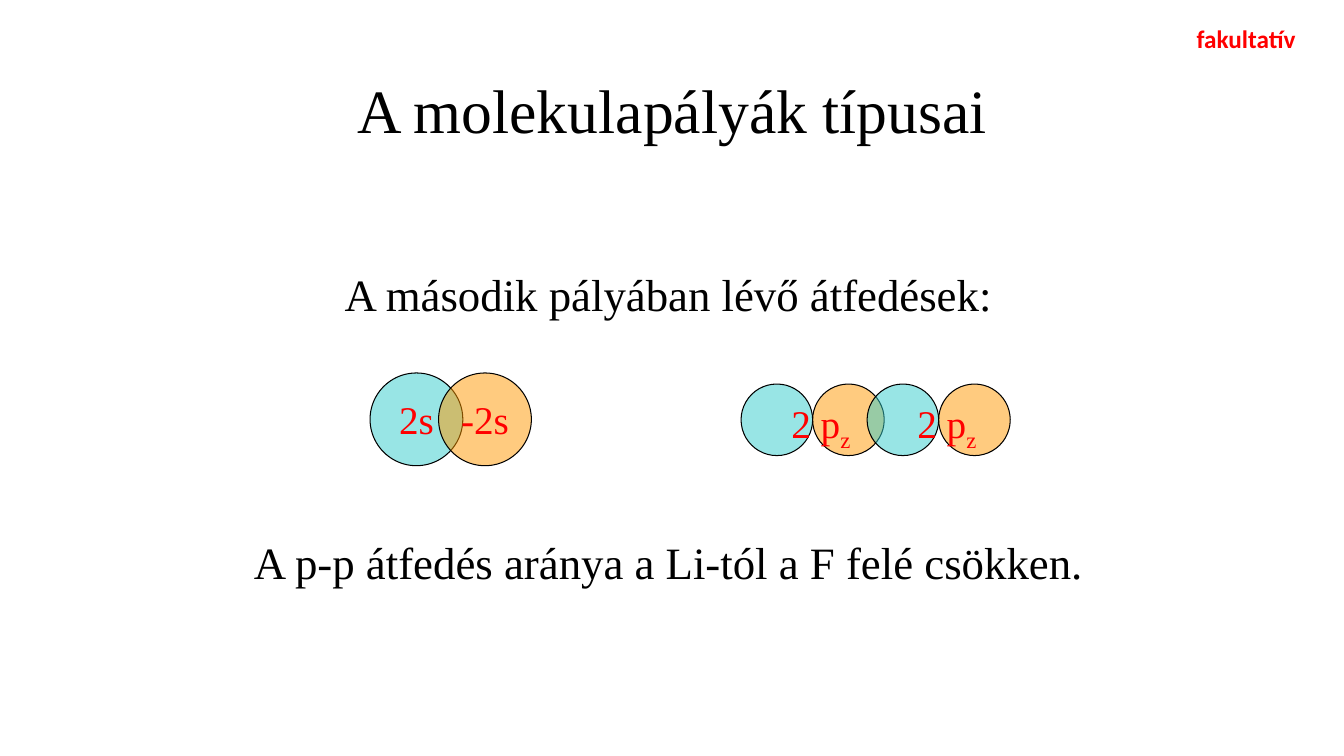
"""Builds a slide on the overlaps that form molecular orbitals."""
import dataclasses

import lxml.etree
import pptx
import pptx.dml.color
import pptx.enum.shapes
import pptx.enum.text
import pptx.oxml.ns
import pptx.util

Inches = pptx.util.Inches
Align = pptx.enum.text.PP_ALIGN
Anchor = pptx.enum.text.MSO_ANCHOR


@dataclasses.dataclass(frozen=True)
class Theme:
    """Colours, fonts and type sizes of the slide."""
    ink: str = "000000"
    accent: str = "FF0000"
    positive: str = "33CCCC"
    negative: str = "FF9900"
    serif: str = "Times New Roman"
    sans: str = "Calibri"
    title: int = 44
    body: int = 32
    label: int = 28
    tag: int = 18
    outline: float = 0.75
    opacity: int = 50


class OrbitalSlide:
    """Holds the theme and the current slide and draws its elements."""

    def __init__(self, slide, theme):
        """Keep the slide and its theme."""
        self.slide = slide
        self.theme = theme

    def fill_text(self, frame, words, size, color, font=None, bold=False, align=Align.LEFT, subscript=""):
        """Fill a text frame with one paragraph and an optional subscript."""
        paragraph = frame.paragraphs[0]
        paragraph.alignment = align
        paragraph.font.name = font or self.theme.serif
        paragraph.font.size = pptx.util.Pt(size)
        paragraph.font.bold = bold
        paragraph.font.color.rgb = pptx.dml.color.RGBColor.from_string(color)
        paragraph.add_run().text = words
        if subscript:
            index = paragraph.add_run()
            index.text = subscript
            index._r.get_or_add_rPr().set("baseline", "-25000")
        return paragraph

    def text(self, left, top, width, height, words, size, color, shapes=None, **style):
        """Add a one-line text box."""
        shapes = shapes or self.slide.shapes
        box = shapes.add_textbox(Inches(left), Inches(top), Inches(width), Inches(height))
        box.text_frame.word_wrap = False
        self.fill_text(box.text_frame, words, size, color, **style)

    def title(self, words):
        """Add the centred slide title."""
        heading = self.slide.shapes.add_textbox(Inches(0.92), Inches(0.4), Inches(11.5), Inches(1.45))
        heading.text_frame.word_wrap = True
        heading.text_frame.vertical_anchor = Anchor.MIDDLE
        paragraph = self.fill_text(heading.text_frame, words, self.theme.title, self.theme.ink, align=Align.CENTER)
        paragraph.line_spacing = 0.9

    def lobe(self, left, top, diameter, color, words="", shapes=None):
        """Add a translucent circle for one orbital lobe."""
        if shapes is None:
            shapes = self.slide.shapes
        circle = shapes.add_shape(pptx.enum.shapes.MSO_SHAPE.OVAL, Inches(left), Inches(top),
                                  Inches(diameter), Inches(diameter))
        circle.shadow.inherit = False
        circle.fill.solid()
        circle.fill.fore_color.rgb = pptx.dml.color.RGBColor.from_string(color)
        tint = circle._element.spPr.find(".//" + pptx.oxml.ns.qn("a:srgbClr"))
        alpha = lxml.etree.SubElement(tint, pptx.oxml.ns.qn("a:alpha"))
        alpha.set("val", str(self.theme.opacity * 1000))
        circle.line.color.rgb = pptx.dml.color.RGBColor.from_string(self.theme.ink)
        circle.line.width = pptx.util.Pt(self.theme.outline)
        if words:
            circle.text_frame.word_wrap = False
            circle.text_frame.vertical_anchor = Anchor.MIDDLE
            self.fill_text(circle.text_frame, words, self.theme.label, self.theme.accent, align=Align.CENTER)

    def p_orbital(self, left, top, diameter):
        """Add a grouped pair of touching lobes with their label."""
        orbital = self.slide.shapes.add_group_shape().shapes
        for step, color in enumerate((self.theme.positive, self.theme.negative)):
            self.lobe(left + step * diameter, top, diameter, color, shapes=orbital)
        self.text(left + 0.4, top + 0.1, 0.81, 0.57, "2 p", self.theme.label, self.theme.accent,
                  shapes=orbital, subscript="z")


def main():
    """Build the slide and save it."""
    deck = pptx.Presentation()
    deck.slide_width, deck.slide_height = Inches(13.33), Inches(7.5)
    theme = Theme()
    page = OrbitalSlide(deck.slides.add_slide(deck.slide_layouts[6]), theme)

    page.title("A molekulapályák típusai")
    page.text(3.32, 2.6, 6.71, 0.64, "A második pályában lévő átfedések:", theme.body, theme.ink)
    page.lobe(3.67, 3.7, 0.92, theme.positive, "2s")
    page.lobe(4.35, 3.7, 0.92, theme.negative, "-2s")
    page.text(2.42, 5.26, 8.51, 0.64, "A p-p átfedés aránya a Li-tól a F felé csökken.", theme.body, theme.ink)
    for left in (7.35, 8.6):
        page.p_orbital(left, 3.81, 0.71)
    page.text(11.77, 0.18, 1.19, 0.4, "fakultatív", theme.tag, theme.accent, font=theme.sans, bold=True)

    deck.save("out.pptx")


if __name__ == "__main__":
    main()
